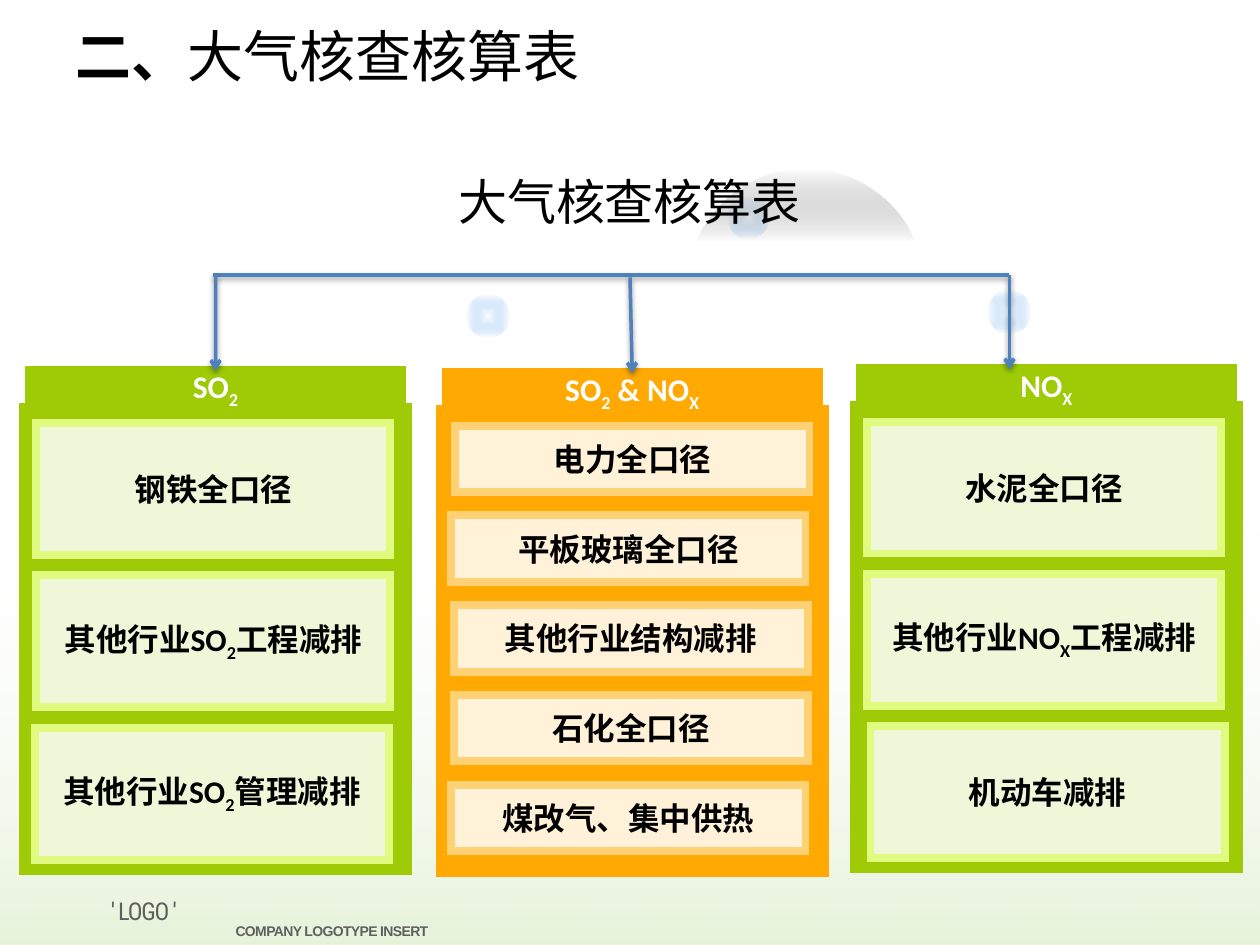
from math import asin, cos, sin

from lxml.etree import SubElement as Sub
from pptx import Presentation
from pptx.dml.color import RGBColor
from pptx.enum.shapes import MSO_CONNECTOR as Link, MSO_SHAPE as Kind
from pptx.enum.text import MSO_ANCHOR as Anchor, PP_ALIGN as Align
from pptx.oxml import parse_xml
from pptx.oxml.ns import nsdecls, qn
from pptx.util import Cm, Pt


def tint(code):
    return RGBColor.from_string(code)


def grad(shape, stops, ang=None):
    """Fill with (place, colour, alpha) stops; without an angle, from the centre out."""
    shape.fill.background()
    marks = "".join(
        f'<a:gs pos="{pos * 1000}"><a:srgbClr val="{code}"><a:alpha val="{alpha * 1000}"/>'
        f"</a:srgbClr></a:gs>" for pos, code, alpha in stops)
    if ang is None:
        way = ('<a:path path="shape"><a:fillToRect l="50000" t="50000" r="50000" b="50000"/>'
               "</a:path>")
    else:
        way = f'<a:lin ang="{ang * 60000}" scaled="0"/>'
    fill = parse_xml(f'<a:gradFill {nsdecls("a")} rotWithShape="1"><a:gsLst>{marks}</a:gsLst>'
                     f"{way}</a:gradFill>")
    props = shape._element.spPr
    props.replace(props.find(qn("a:noFill")), fill)


def write(para, text, size=18, font="Calibri", east="Noto Sans CJK SC", color="000000",
          bold=False, gap=None):
    """Add runs to a paragraph; parts between underscores are set as subscript."""
    for i, part in enumerate(text.split("_")):
        if not part:
            continue
        run = para.add_run()
        run.text = part
        run.font.size, run.font.bold, run.font.name = Pt(size), bold, font
        run.font.color.rgb = tint(color)
        props = run._r.get_or_add_rPr()
        Sub(props, qn("a:ea")).set("typeface", east)
        if i % 2:
            props.set("baseline", "-25000")
        if gap:
            props.set("spc", str(gap))


class Board:
    blue = "4F81BD"
    glow = [(0, "FFFFFF", 100), (100, "67ABF5", 0)]

    def __init__(self, slide):
        self.items = slide.shapes

    def shape(self, kind, x, y, w, h):
        item = self.items.add_shape(kind, Cm(x), Cm(y), Cm(w), Cm(h))
        item.shadow.inherit = False
        item.line.fill.background()
        return item

    def label(self, x, y, w, h, align=Align.LEFT, wrap=True, anchor=Anchor.TOP):
        """Add an empty text box and return its paragraph."""
        frame = self.items.add_textbox(Cm(x), Cm(y), Cm(w), Cm(h)).text_frame
        frame.word_wrap, frame.vertical_anchor = wrap, anchor
        para = frame.paragraphs[0]
        para.alignment = align
        return para

    def block(self, x, y, w, h, fill, edge, width, text="", alpha=100, color="000000"):
        item = self.shape(Kind.RECTANGLE, x, y, w, h)
        item.fill.solid()
        item.fill.fore_color.rgb = tint(fill)
        if alpha < 100:
            code = item._element.spPr.find(qn("a:solidFill"))[0]
            Sub(code, qn("a:alpha")).set("val", str(alpha * 1000))
        item.line.color.rgb, item.line.width = tint(edge), Pt(width)
        Sub(item.line._get_or_add_ln(), qn("a:miter")).set("lim", "800000")
        if text:
            frame = item.text_frame
            frame.word_wrap, frame.vertical_anchor = True, Anchor.MIDDLE
            frame.paragraphs[0].alignment = Align.CENTER
            write(frame.paragraphs[0], text, color=color, bold=True)
        return item

    def column(self, x, y, head, main, rim, cards, first, step, high):
        """Draw a panel with its cards, given as (inset, text); return the header."""
        self.block(x, y, 7.7, 9.3, main, main, 6)
        top = self.block(x + 0.11, y - 0.75, 7.47, 0.71, main, main, 6, head, color="FFFFFF")
        for i, (inset, text) in enumerate(cards):
            self.block(x + inset, y + first + i * step, 7.14, high, "FFFFFF", rim, 4.5,
                       text, alpha=85)
        return top

    def line(self, x, y, right, end, arrow=False, goal=None):
        """Draw a line; a goal is the block whose top middle it is joined to."""
        item = self.items.add_connector(Link.STRAIGHT, Cm(x), Cm(y), Cm(right), Cm(end))
        item.line.color.rgb, item.line.width = tint(self.blue), Pt(2)
        if goal is not None:
            item.end_connect(goal, 0)
        if arrow:
            Sub(item.line._get_or_add_ln(), qn("a:tailEnd")).set("type", "arrow")
        item._element.spPr.append(parse_xml(
            f'<a:effectLst {nsdecls("a")}><a:outerShdw blurRad="40000" dist="20000" '
            'dir="5400000" rotWithShape="0"><a:srgbClr val="000000"><a:alpha val="38000"/>'
            "</a:srgbClr></a:outerShdw></a:effectLst>"))

    def spot(self, x, y):
        grad(self.shape(Kind.OVAL, x, y, 0.86, 0.86), self.glow)

    def dome(self, mid, base, half, rad):
        """Draw the cap of a circle over a level chord."""
        turn, steps = asin(half / rad), 60
        hub = base + rad * cos(turn)
        angles = [turn * (2 * i / steps - 1) for i in range(steps + 1)]
        dots = [(Cm(mid + rad * sin(a)), Cm(hub - rad * cos(a))) for a in angles]
        pen = self.items.build_freeform(*dots[0])
        pen.add_line_segments(dots[1:], close=True)
        item = pen.convert_to_shape()
        item.shadow.inherit = False
        item.line.fill.background()
        grad(item, [(0, "FFFFFF", 100), (100, "767676", 0)], 90)


def main():
    deck = Presentation()
    deck.slide_width, deck.slide_height = Cm(25.4), Cm(19.05)
    board = Board(deck.slides.add_slide(deck.slide_layouts[6]))

    haze = board.shape(Kind.RECTANGLE, 0, 10.39, 25.4, 8.66)
    grad(haze, [(0, "FFFFFF", 0), (100, "57AB00", 15)], 90)
    write(board.label(1.3, 17.93, 3.2, 0.81, Align.CENTER, False), "' LOGO '", size=14,
          font="Roboto Condensed", color="5F5F5F", gap=-70)
    write(board.label(4.5, 18.52, 5, 0.2), "COMPANY LOGOTYPE INSERT", size=8,
          font="Arial", color="5F5F5F", bold=True, gap=-40)

    board.spot(14.66, 3.94)
    board.dome(16.24, 4.85, 2.2, 2.39)
    board.spot(9.4, 5.94)
    board.spot(19.91, 5.87)

    sans, bold = "Noto Sans CJK SC", "Noto Sans CJK KR"
    title = board.label(1.27, 0.53, 22.86, 1.17, anchor=Anchor.MIDDLE)
    write(title, "二、", size=32, font=bold, east=bold, bold=True)
    write(title, "大气核查核算表", size=32, font=sans)
    write(board.label(8.89, 3.33, 7.6, 1.45, Align.CENTER), "大气核查核算表", size=28, font=sans)

    green, orange = ("9ECA06", "E1FB81"), ("FFA902", "FFD175")
    tall, low = (0.3, 3.07, 2.66), (0.3, 1.81, 1.34)
    left = board.column(0.5, 8.23, "SO_2", *green, [
        (0.23, "钢铁全口径"), (0.23, "其他行业SO_2_工程减排"), (0.2, "其他行业SO_2_管理减排")], *tall)
    mid = board.column(8.9, 8.28, "SO_2_ & NO_X", *orange, [
        (0.28, "电力全口径"), (0.2, "平板玻璃全口径"), (0.25, "其他行业结构减排"),
        (0.25, "石化全口径"), (0.2, "煤改气、集中供热")], *low)
    board.column(17.25, 8.2, "NO_X", *green, [
        (0.23, "水泥全口径"), (0.23, "其他行业NO_X_工程减排"), (0.3, "机动车减排")], *tall)

    board.line(4.29, 5.54, 20.35, 5.54)
    for x, y, goal in [(4.35, 5.54, left), (12.7, 5.59, mid), (20.35, 5.54, None)]:
        board.line(x, y, x, 7.45, True, goal)

    deck.save("out.pptx")


if __name__ == "__main__":
    main()
